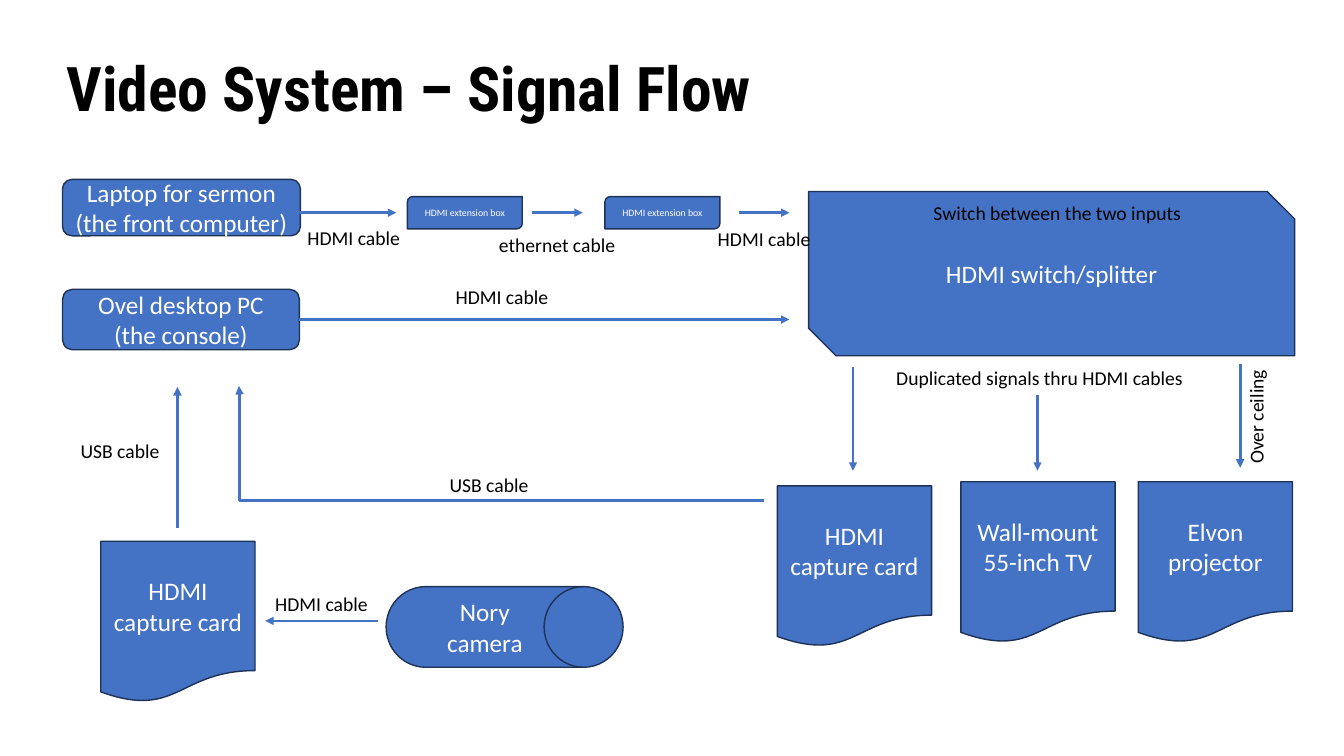
from lxml.etree import SubElement
from pptx import Presentation
from pptx.dml.color import RGBColor
from pptx.enum.shapes import MSO_CONNECTOR as LINK, MSO_SHAPE as SHAPE
from pptx.enum.text import MSO_ANCHOR as ANCHOR, MSO_AUTO_SIZE as AUTO, PP_ALIGN as ALIGN
from pptx.oxml.ns import qn
from pptx.util import Pt

PX = 9144
BLUE = RGBColor(0x44, 0x72, 0xC4)
NAVY = RGBColor(0x1E, 0x32, 0x56)
BLACK = RGBColor(0, 0, 0)
WHITE = RGBColor(255, 255, 255)

TITLE = ("Video System – Signal Flow", (56, 18, 1150, 145))
CARD_SIZE = (153, 160)
EXTENDER_SIZE = (114, 32)
DEVICES = [
    (SHAPE.ROUNDED_RECTANGLE, "Laptop for sermon\n(the front computer)", (62, 178, 236, 56), 18),
    (SHAPE.ROUNDED_RECTANGLE, "Ovel desktop PC\n(the console)", (62, 287, 235, 60), 18),
    (SHAPE.SNIP_2_DIAG_RECTANGLE, "HDMI switch/splitter", (802, 190, 482, 163), 18),
    (SHAPE.FLOWCHART_DIRECT_ACCESS_STORAGE, "Nory camera", (383, 582, 235, 80), 18),
]
DEVICES += [(SHAPE.ROUND_2_DIAG_RECTANGLE, "HDMI extension box", (left, 195, *EXTENDER_SIZE), 7)
            for left in (404, 600)]
DEVICES += [(SHAPE.FLOWCHART_DOCUMENT, name, (left, top, *CARD_SIZE), 18)
            for name, left, top in [
                ("Elvon projector", 1129, 478),
                ("Wall-mount 55-inch TV", 953, 478),
                ("HDMI capture card", 771, 482),
                ("HDMI capture card", 100, 537)]]

ARROWS = [
    (297, 317, 783, 317),
    (297, 211, 393, 211),
    (733, 211, 783, 211),
    (528, 211, 578, 211),
    (1230, 361, 1230, 464),
    (846, 364, 846, 467),
    (1029, 392, 1029, 467),
    (375, 616, 263, 616),
    (176, 524, 176, 384),
]
CAPTURE_RETURN = (758, 497, 237, 383)

LABEL_HEIGHT = 34
LABELS = [
    ("HDMI cable", 295, 219, 113, 0),
    ("HDMI cable", 442, 278, 113, 0),
    ("HDMI cable", 702, 220, 113, 0),
    ("ethernet cable", 485, 226, 137, 0),
    ("Duplicated signals thru HDMI cables", 879, 358, 308, 0),
    ("HDMI cable", 263, 582, 113, 0),
    ("USB cable", 70, 431, 99, 0),
    ("USB cable", 436, 464, 99, 0),
    ("Switch between the two inputs", 916, 194, 268, 0),
    ("Over ceiling", 1189, 396, 114, 270),
]


def emu(lengths):
    return [length * PX for length in lengths]


def write(frame, text, size, color=BLACK, font="Calibri", bold=False,
          align=ALIGN.LEFT, anchor=ANCHOR.TOP, wrap=True, spacing=None):
    frame.word_wrap = wrap
    frame.vertical_anchor = anchor
    frame.text = text
    for paragraph in frame.paragraphs:
        paragraph.alignment = align
        paragraph.line_spacing = spacing
        paragraph.font.size = Pt(size)
        paragraph.font.name = font
        paragraph.font.bold = bold
        paragraph.font.color.rgb = color


def connect(slide, kind, ends):
    arrow = slide.shapes.add_connector(kind, *emu(ends))
    arrow.line.color.rgb = BLUE
    arrow.line.width = Pt(2)
    SubElement(arrow.line._get_or_add_ln(), qn("a:tailEnd"), type="triangle")
    SubElement(arrow._element.spPr, qn("a:effectLst"))
    return arrow


def main():
    deck = Presentation()
    deck.slide_width, deck.slide_height = emu((1333, 750))
    slide = deck.slides.add_slide(deck.slide_layouts[5])

    heading, heading_box = TITLE
    title = slide.shapes.title
    title.left, title.top, title.width, title.height = emu(heading_box)
    write(title.text_frame, heading, 44, font="Roboto Condensed", bold=True,
          anchor=ANCHOR.MIDDLE, spacing=0.9)

    for kind, name, box, size in DEVICES:
        device = slide.shapes.add_shape(kind, *emu(box))
        device.shadow.inherit = False
        device.fill.solid()
        device.fill.fore_color.rgb = BLUE
        device.line.color.rgb = NAVY
        device.line.width = Pt(1)
        write(device.text_frame, name, size, WHITE, align=ALIGN.CENTER, anchor=ANCHOR.MIDDLE)

    for ends in ARROWS:
        connect(slide, LINK.STRAIGHT, ends)
    bend = connect(slide, LINK.ELBOW, CAPTURE_RETURN)
    guides = bend._element.spPr.find(qn("a:prstGeom")).get_or_add_avLst()
    SubElement(guides, qn("a:gd"), name="adj1", fmla="val 99900")

    for text, left, top, width, turn in LABELS:
        label = slide.shapes.add_textbox(*emu((left, top, width, LABEL_HEIGHT)))
        label.rotation = turn
        write(label.text_frame, text, 14, wrap=False)
        label.text_frame.auto_size = AUTO.SHAPE_TO_FIT_TEXT

    deck.save("out.pptx")


if __name__ == "__main__":
    main()
